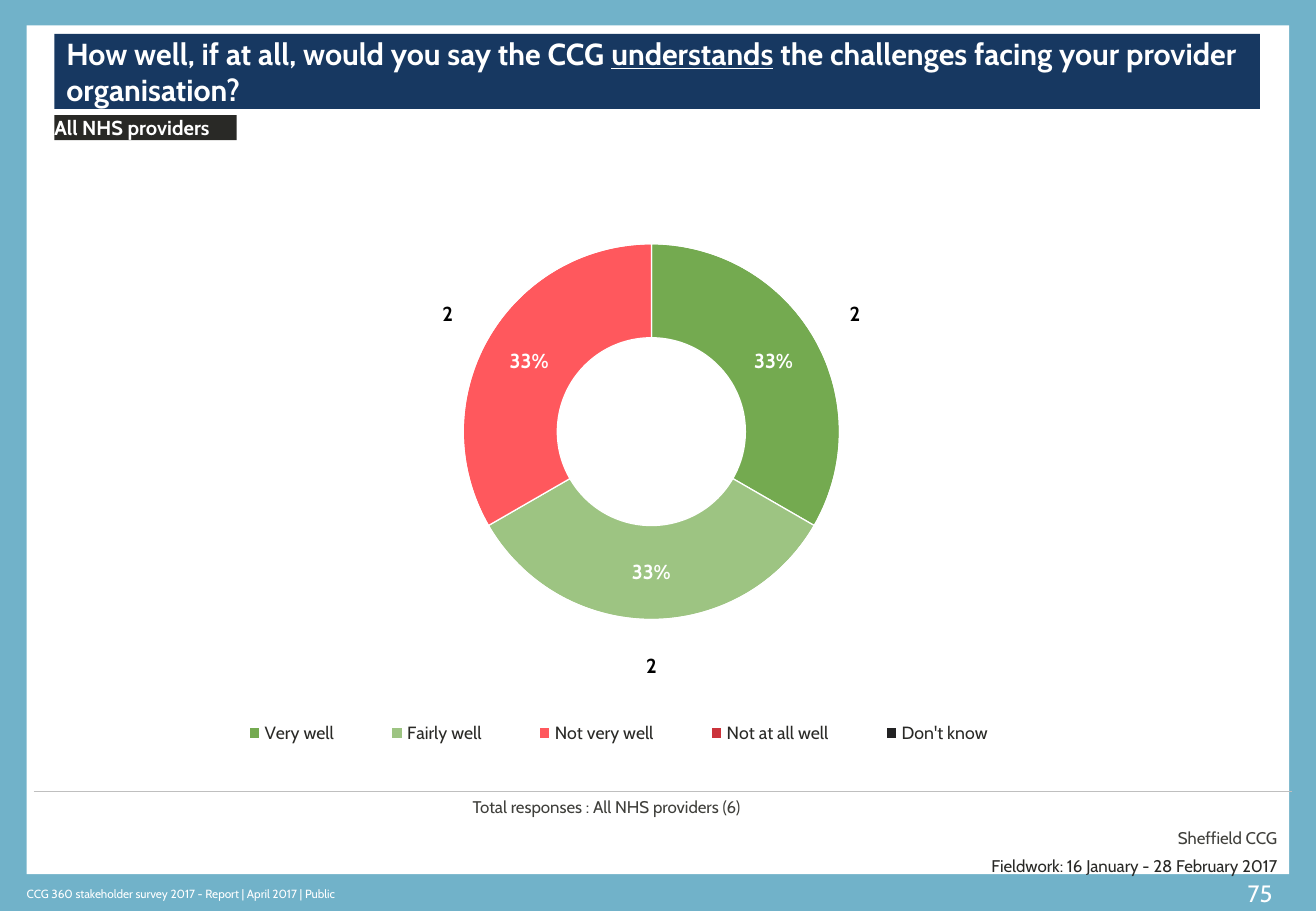
import pptx
import pptx.chart.data
import pptx.dml.color
import pptx.enum.chart
import pptx.enum.shapes
import pptx.enum.text
import pptx.oxml.ns
import pptx.oxml.xmlchemy
import pptx.util

Cm = pptx.util.Cm
Pt = pptx.util.Pt
RGBColor = pptx.dml.color.RGBColor
Align = pptx.enum.text.PP_ALIGN
Anchor = pptx.enum.text.MSO_ANCHOR
OxmlElement = pptx.oxml.xmlchemy.OxmlElement

FONT = "Cabin"
BORDER_BLUE = RGBColor(0x71, 0xB2, 0xC9)
NAVY = RGBColor(0x17, 0x38, 0x61)
CHARCOAL = RGBColor(0x29, 0x29, 0x26)
DARK_GREY = RGBColor(0x3F, 0x3F, 0x3B)
RULE_GREY = RGBColor(0xBF, 0xBF, 0xBF)
WHITE = RGBColor(0xFF, 0xFF, 0xFF)
BLACK = RGBColor(0x00, 0x00, 0x00)

ANSWERS = {
    "Very well": (33, 2, RGBColor(0x74, 0xAA, 0x50)),
    "Fairly well": (33, 2, RGBColor(0x9D, 0xC4, 0x82)),
    "Not very well": (33, 2, RGBColor(0xFF, 0x58, 0x5D)),
    "Not at all well": (0, 0, RGBColor(0xCB, 0x33, 0x3B)),
    "Don't know": (0, 0, RGBColor(0x22, 0x22, 0x23)),
}


def style_font(font, size, color, bold=False):
    font.name = FONT
    font.size = Pt(size)
    font.bold = bold
    font.color.rgb = color


def add_panel(slide, left, top, width, height, color):
    panel = slide.shapes.add_shape(
        pptx.enum.shapes.MSO_SHAPE.RECTANGLE,
        Cm(left), Cm(top), Cm(width), Cm(height))
    panel.shadow.inherit = False
    panel.fill.solid()
    panel.fill.fore_color.rgb = color
    panel.line.fill.background()
    return panel


def add_text_area(slide, left, top, width, height):
    return slide.shapes.add_textbox(Cm(left), Cm(top), Cm(width), Cm(height))


def set_frame(shape, anchor=Anchor.TOP, inset=True):
    frame = shape.text_frame
    frame.word_wrap = True
    frame.vertical_anchor = anchor
    if not inset:
        frame.margin_left = frame.margin_right = 0
        frame.margin_top = frame.margin_bottom = 0
    return frame


def write(paragraph, text, size, color, bold=False, align=Align.LEFT):
    paragraph.alignment = align
    run = paragraph.add_run()
    run.text = text
    style_font(run.font, size, color, bold)
    return run


def add_rule(slide, left, right, y):
    rule = slide.shapes.add_connector(
        pptx.enum.shapes.MSO_CONNECTOR.STRAIGHT,
        Cm(left), Cm(y), Cm(right), Cm(y))
    rule.line.color.rgb = RULE_GREY
    rule.line.width = Pt(0.25)
    rule._element.spPr.append(OxmlElement("a:effectLst"))


def place_chart_part(part, index, modes, **fractions):
    """Insert a manual layout, in fractions of the chart, as child number index."""
    for old in part.findall(pptx.oxml.ns.qn("c:layout")):
        part.remove(old)
    layout = OxmlElement("c:layout")
    manual = OxmlElement("c:manualLayout")
    layout.append(manual)
    for tag, value in {**modes, "xMode": "edge", "yMode": "edge", **fractions}.items():
        setting = OxmlElement(f"c:{tag}")
        setting.set("val", str(value))
        manual.append(setting)
    part.insert(index, layout)


def style_ring(series, number_format, label_color, fills):
    """Colour a ring's segments (None leaves one clear) and label all but zeros."""
    for index, color in enumerate(fills):
        segment = series.points[index].format
        if color is None:
            segment.fill.background()
        else:
            segment.fill.solid()
            segment.fill.fore_color.rgb = color
        segment.line.color.rgb = WHITE
        segment.line.width = Pt(0.75)
    labels = series.data_labels
    labels.show_value = True
    labels.number_format = number_format
    labels.number_format_is_linked = False
    style_font(labels.font, 12, label_color, bold=True)


def add_answer_chart(slide):
    shares, counts, colors = zip(*ANSWERS.values())
    answers = pptx.chart.data.CategoryChartData()
    answers.categories = list(ANSWERS)
    answers.add_series("Series 1", shares)
    answers.add_series("Series 2", counts)
    chart = slide.shapes.add_chart(
        pptx.enum.chart.XL_CHART_TYPE.DOUGHNUT,
        Cm(0), Cm(3.12), Cm(27.51), Cm(13.41), answers).chart
    chart.has_title = False
    style_font(chart.font, 18, CHARCOAL)

    plot = chart.plots[0]
    plot.vary_by_categories = True
    share_ring, count_ring = plot.series
    style_ring(share_ring, '0"%";;;', WHITE, colors)
    style_ring(count_ring, "0;;;", BLACK, [None] * len(ANSWERS))

    chart.has_legend = True
    legend = chart.legend
    legend.position = pptx.enum.chart.XL_LEGEND_POSITION.BOTTOM
    legend.include_in_layout = False
    style_font(legend.font, 10.5, CHARCOAL)

    chart_space = chart._chartSpace
    chart_space.xpath(".//c:holeSize")[0].set("val", "38")
    place_chart_part(chart_space.xpath(".//c:plotArea")[0], 0,
                     {"layoutTarget": "inner"}, x=0.28, y=0, w=0.43, h=0.88)
    place_chart_part(chart_space.xpath(".//c:legend")[0], 1,
                     {}, x=0.15, y=0.88, w=0.64, h=0.06)


def add_question(slide):
    banner = add_panel(slide, 1.14, 0.71, 25.2, 1.57, NAVY)
    question = set_frame(banner, Anchor.MIDDLE).paragraphs[0]
    write(question, "How well, if at all, would you say the CCG ", 18, WHITE, True)
    write(question, "understands", 18, WHITE, True).font.underline = True
    write(question, " the challenges facing your provider organisation?", 18, WHITE, True)

    audience = add_panel(slide, 1.14, 2.41, 3.81, 0.52, CHARCOAL)
    write(set_frame(audience, Anchor.MIDDLE, inset=False).paragraphs[0],
          "All NHS providers", 12, WHITE, True)


def add_survey_details(slide):
    base = set_frame(add_text_area(slide, 9.63, 16.54, 17.32, 0.97))
    write(base.paragraphs[0], "Total responses : All NHS providers (6)", 10, DARK_GREY)
    group = base.add_paragraph()
    group.space_before = Pt(6)
    write(group, "Sheffield CCG", 10, DARK_GREY, align=Align.RIGHT)

    fieldwork = set_frame(add_text_area(slide, 19.35, 17.9, 7.35, 0.43), inset=False)
    write(fieldwork.paragraphs[0], "Fieldwork: 16 January - 28 February 2017",
          10, CHARCOAL, align=Align.RIGHT)


def add_footer(slide):
    page_number = set_frame(add_text_area(slide, 25.73, 18.26, 1.12, 0.86))
    write(page_number.paragraphs[0], "75", 14, WHITE, align=Align.RIGHT)
    report = set_frame(add_text_area(slide, 0.56, 18.44, 13.59, 0.51),
                       Anchor.MIDDLE, inset=False)
    write(report.paragraphs[0],
          "CCG 360 stakeholder survey 2017 - Report | April 2017 | Public", 7, WHITE)


def main():
    deck = pptx.Presentation()
    deck.slide_width = Cm(27.51)
    deck.slide_height = Cm(19.05)
    slide = deck.slides.add_slide(deck.slide_layouts[6])
    slide.background.fill.solid()
    slide.background.fill.fore_color.rgb = BORDER_BLUE

    add_panel(slide, 0.56, 0.53, 26.39, 17.75, WHITE)
    add_footer(slide)
    add_rule(slide, 0.71, 27, 16.54)
    add_answer_chart(slide)
    add_question(slide)
    add_survey_details(slide)
    deck.save("out.pptx")


if __name__ == "__main__":
    main()
